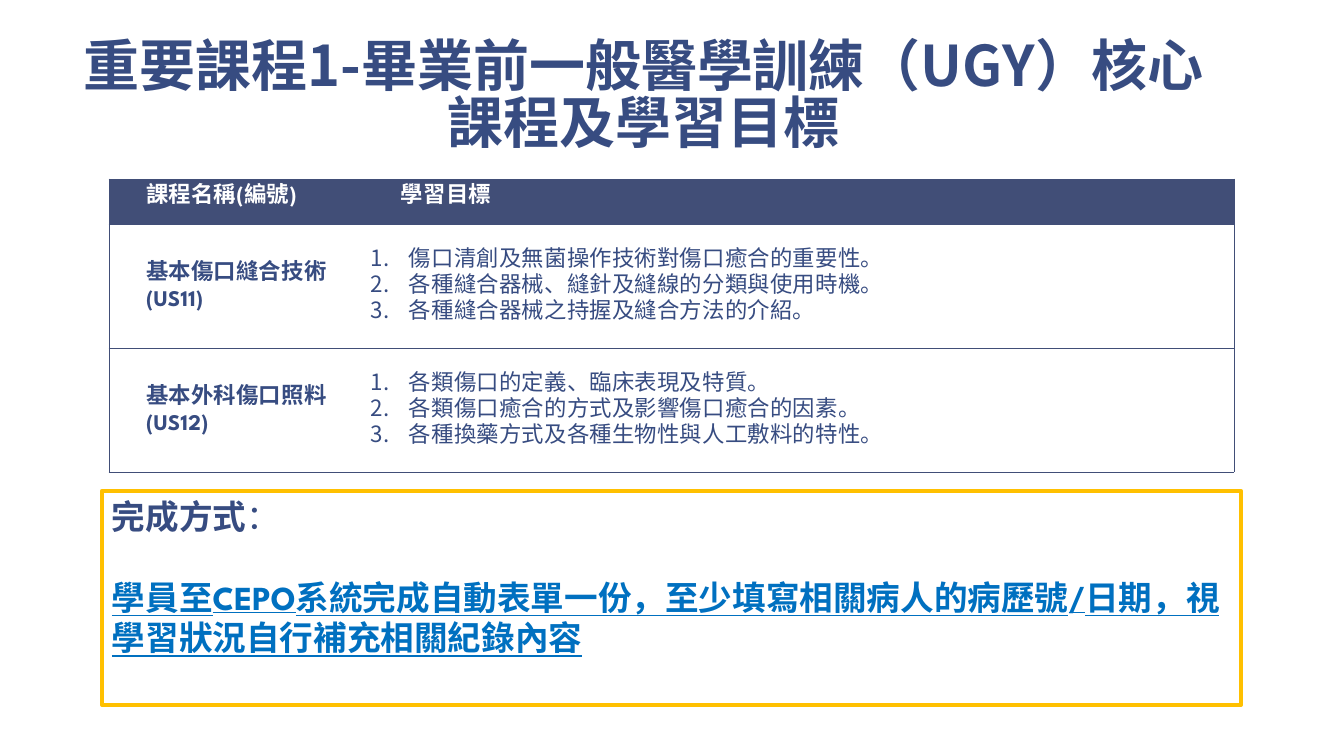
"""Build the slide on core undergraduate medical training courses and their goals."""
from dataclasses import dataclass
from typing import Any, NamedTuple

from lxml.etree import SubElement
from pptx import Presentation
from pptx.dml.color import RGBColor
from pptx.enum.text import MSO_ANCHOR as Anchor, MSO_AUTO_SIZE as AutoSize, PP_ALIGN as Align
from pptx.oxml.ns import qn
from pptx.util import Emu, Pt

EMU_PER_PX = 914400 / 100.8


@dataclass(frozen=True)
class Theme:
    navy: str = "374C81"
    header: str = "414E77"
    white: str = "FFFFFF"
    blue: str = "0070C0"
    gold: str = "FFC000"
    latin: str = "League Spartan"
    cjk: str = "Noto Sans CJK TC"
    title_size: int = 40
    note_size: int = 24
    table_size: int = 16


class Box(NamedTuple):
    left: int
    top: int
    width: int
    height: int


class Course(NamedTuple):
    name: str
    code: str
    goals: tuple[str, ...]


THEME = Theme()
TITLE = "重要課程1-畢業前一般醫學訓練（UGY）核心課程及學習目標"
TITLE_BOX = Box(44, 8, 1199, 154)
TABLE_BOX = Box(109, 179, 1125, 293)
NOTE_BOX = Box(102, 491, 1139, 214)
COLUMN_WIDTHS = (255, 870)
ROW_HEIGHTS = (45, 124, 124)
HEADINGS = ("課程名稱(編號)", "學習目標")
COURSES = (
    Course("基本傷口縫合技術", "(US11)", (
        "傷口清創及無菌操作技術對傷口癒合的重要性。",
        "各種縫合器械、縫針及縫線的分類與使用時機。",
        "各種縫合器械之持握及縫合方法的介紹。",
    )),
    Course("基本外科傷口照料", "(US12)", (
        "各類傷口的定義、臨床表現及特質。",
        "各類傷口癒合的方式及影響傷口癒合的因素。",
        "各種換藥方式及各種生物性與人工敷料的特性。",
    )),
)
NOTE_HEADING = "完成方式"
NOTE = "學員至CEPO系統完成自動表單一份，至少填寫相關病人的病歷號/日期，視學習狀況自行補充相關紀錄內容"


def px(length: int) -> Emu:
    return Emu(round(length * EMU_PER_PX))


def apply(target: Any, formats: dict[str, Any]) -> None:
    for attribute, value in formats.items():
        setattr(target, attribute, value)


def add_text(paragraph: Any, text: str, size: int, color: str, bold: bool = True,
             underline: bool = False, latin: str = THEME.latin, spacing: int = 0) -> None:
    run = paragraph.add_run()
    run.text = text
    apply(run.font, {"size": Pt(size), "bold": bold, "underline": underline, "name": latin})
    run.font.color.rgb = RGBColor.from_string(color)
    properties = run.font._element
    SubElement(properties, qn("a:ea"), typeface=THEME.cjk)
    if spacing:
        properties.set("spc", str(spacing))


def add_borders(cell: Any, sides: str) -> None:
    for side in "LRTB":
        border = SubElement(cell._tc.get_or_add_tcPr(), qn(f"a:ln{side}"), w=str(Pt(0.5)))
        if side in sides:
            fill = SubElement(border, qn("a:solidFill"))
            SubElement(fill, qn("a:srgbClr"), val=THEME.header)
        else:
            SubElement(border, qn("a:noFill"))


def fill_cell(cell: Any, lines: tuple[str, ...], sides: str, color: str = THEME.navy,
              leading: float = 18.4, numbered: bool = False) -> None:
    apply(cell, {"margin_left": px(7), "margin_right": px(7), "margin_top": 0,
                 "margin_bottom": 0, "vertical_anchor": Anchor.MIDDLE})
    add_borders(cell, sides)
    frame = cell.text_frame
    for index, line in enumerate(lines):
        paragraph = frame.add_paragraph() if index else frame.paragraphs[0]
        paragraph.line_spacing = Pt(leading)
        layout = paragraph._p.get_or_add_pPr()
        layout.set("marL", str(px(38) if numbered else 0))
        layout.set("indent", str(px(-38 if numbered else 30)))
        if numbered:
            SubElement(layout, qn("a:buFont"), typeface="+mj-lt")
            SubElement(layout, qn("a:buAutoNum"), type="arabicPeriod")
            tabs = SubElement(layout, qn("a:tabLst"))
            SubElement(tabs, qn("a:tab"), pos=str(px(33)), algn="l")
        add_text(paragraph, line, THEME.table_size, color, bold=not numbered, spacing=20)


def add_title(slide: Any) -> None:
    title = slide.shapes.title
    apply(title, {name: px(length) for name, length in TITLE_BOX._asdict().items()})
    frame = title.text_frame
    apply(frame, {"word_wrap": True, "auto_size": AutoSize.NONE, "vertical_anchor": Anchor.BOTTOM,
                  "margin_left": px(13), "margin_right": px(13),
                  "margin_top": px(7), "margin_bottom": px(7)})
    paragraph = frame.paragraphs[0]
    apply(paragraph, {"alignment": Align.CENTER, "line_spacing": 0.85})
    add_text(paragraph, TITLE, THEME.title_size, THEME.navy, latin=THEME.cjk)


def add_courses(slide: Any) -> None:
    table = slide.shapes.add_table(len(ROW_HEIGHTS), len(COLUMN_WIDTHS), *map(px, TABLE_BOX)).table
    apply(table, {"first_row": False, "horz_banding": False})
    for column, width in zip(table.columns, COLUMN_WIDTHS):
        column.width = px(width)
    for row, height in zip(table.rows, ROW_HEIGHTS):
        row.height = px(height)
    for column, (heading, side) in enumerate(zip(HEADINGS, "LR")):
        cell = table.cell(0, column)
        fill_cell(cell, (heading,), side + "TB", THEME.white, leading=10)
        cell.fill.solid()
        cell.fill.fore_color.rgb = RGBColor.from_string(THEME.header)
    for row, course in enumerate(COURSES, 1):
        name_cell, goals_cell = table.cell(row, 0), table.cell(row, 1)
        fill_cell(name_cell, (course.name, course.code), "LTB")
        fill_cell(goals_cell, course.goals, "RTB", numbered=True)
        for cell in (name_cell, goals_cell):
            cell.fill.background()


def add_note(slide: Any) -> None:
    note = slide.shapes.add_textbox(*map(px, NOTE_BOX))
    note.line.color.rgb = RGBColor.from_string(THEME.gold)
    note.line.width = Pt(3)
    frame = note.text_frame
    apply(frame, {"word_wrap": True, "auto_size": AutoSize.NONE, "vertical_anchor": Anchor.TOP})
    heading = frame.paragraphs[0]
    add_text(heading, NOTE_HEADING, THEME.note_size, THEME.navy)
    add_text(heading, "：", THEME.note_size, THEME.navy, bold=False)
    instruction = frame.add_paragraph()
    instruction.space_before = Pt(29)
    add_text(instruction, NOTE, THEME.note_size, THEME.blue, underline=True)


def main() -> None:
    deck = Presentation()
    apply(deck, {"slide_width": px(1344), "slide_height": px(756)})
    slide = deck.slides.add_slide(deck.slide_layouts[5])
    add_title(slide)
    add_note(slide)
    add_courses(slide)
    deck.save("out.pptx")


if __name__ == "__main__":
    main()
